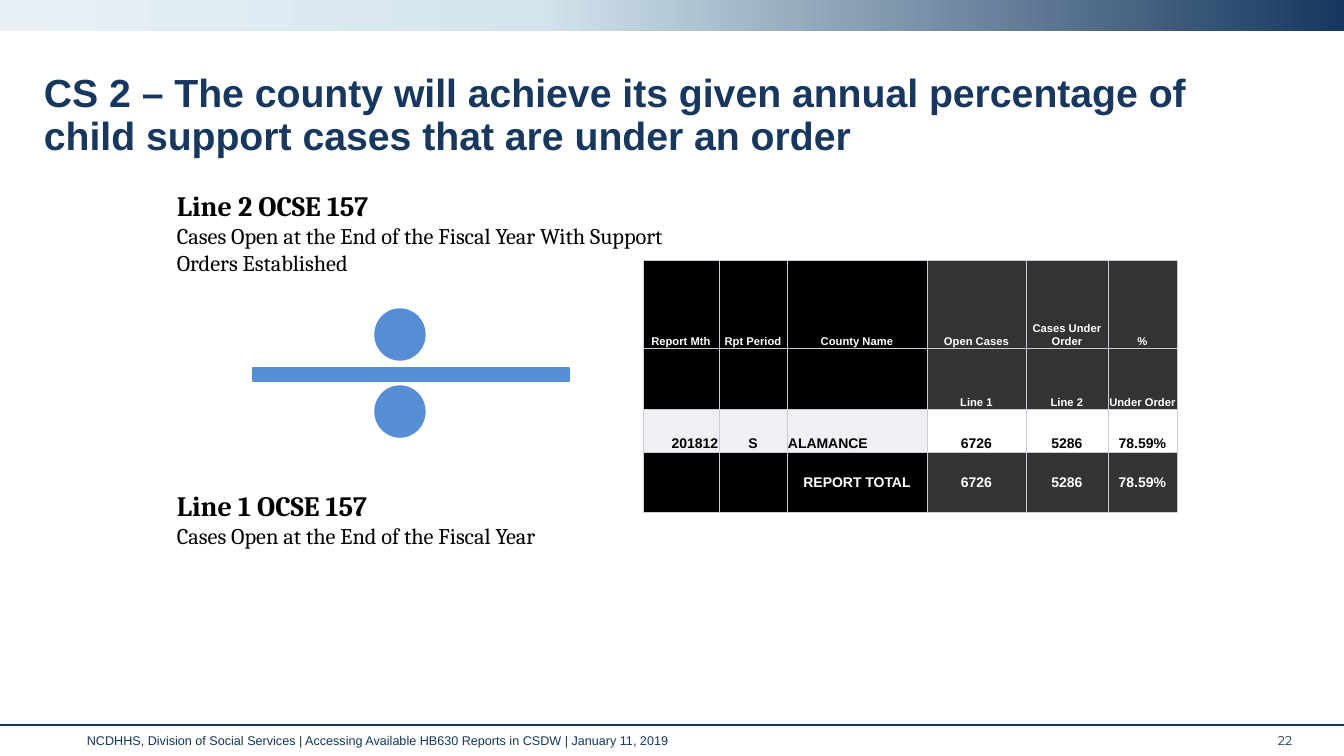
from copy import deepcopy

from lxml.etree import SubElement
from pptx import Presentation
from pptx.dml.color import RGBColor
from pptx.enum.shapes import MSO_CONNECTOR, MSO_SHAPE
from pptx.enum.text import MSO_ANCHOR, PP_ALIGN
from pptx.oxml.ns import qn
from pptx.util import Emu, Pt

NAVY = RGBColor(0x17, 0x37, 0x5E)
FOOTER_NAVY = RGBColor(0x15, 0x36, 0x5E)
BLUE = RGBColor(0x55, 0x8E, 0xD5)
ICE = RGBColor(0xD3, 0xE4, 0xED)
PALE = RGBColor(0xE9, 0xF1, 0xF6)
BLACK = RGBColor(0, 0, 0)
CHARCOAL = RGBColor(0x33, 0x33, 0x33)
LAVENDER = RGBColor(0xF0, 0xF0, 0xF4)
WHITE = RGBColor(0xFF, 0xFF, 0xFF)
BORDER = "CACAD9"

TITLE = ("CS 2 – The county will achieve its given annual percentage of "
         "child support cases that are under an order")
FOOTER = ("NCDHHS, Division of Social Services | Accessing Available HB630 "
          "Reports in CSDW | January 11, 2019")
PAGE_NUMBER = "22"
# top, height, heading, explanation
RATIO_PARTS = [
    (184, 129, "Line 2 OCSE 157",
     "Cases Open at the End of the Fiscal Year With Support Orders Established"),
    (484, 102, "Line 1 OCSE 157", "Cases Open at the End of the Fiscal Year"),
]
DIVISION_SIGN = [
    (MSO_SHAPE.RECTANGLE, (253, 368, 316, 13)),
    (MSO_SHAPE.OVAL, (375, 309, 50, 51)),
    (MSO_SHAPE.OVAL, (375, 386, 50, 51)),
]
BAND_STOPS = [(0, NAVY), (0.6, ICE), (1, PALE)]

COLUMN_WIDTHS = [76, 68, 140, 99, 82, 69]
LABEL_COLUMNS = 3
# height, label fill, figure fill, text colour, text size, anchor, cells
TABLE_ROWS = [
    (88, BLACK, CHARCOAL, WHITE, 8, MSO_ANCHOR.BOTTOM,
     ["Report Mth", "Rpt Period", "County Name", "Open Cases",
      "Cases Under Order", "%"]),
    (61, BLACK, CHARCOAL, WHITE, 8, MSO_ANCHOR.BOTTOM,
     ["", "", "", "Line 1", "Line 2", "Under Order"]),
    (43, LAVENDER, WHITE, BLACK, 10, MSO_ANCHOR.BOTTOM,
     ["201812", "S", "ALAMANCE", "6726", "5286", "78.59%"]),
    (60, BLACK, CHARCOAL, WHITE, 10, MSO_ANCHOR.MIDDLE,
     ["", "", "REPORT TOTAL", "6726", "5286", "78.59%"]),
]
ALIGNMENTS = {"201812": PP_ALIGN.RIGHT, "ALAMANCE": PP_ALIGN.LEFT}


def px(length):
    return Emu(round(length * 914400 / 100.8))


def box(*lengths):
    return [px(length) for length in lengths]


def write(paragraph, text, size=10, font="Arial", color=BLACK, bold=False,
          align=PP_ALIGN.LEFT):
    """Append one formatted run to the paragraph."""
    run = paragraph.add_run()
    run.text = text
    run.font.size = Pt(size)
    run.font.name = font
    run.font.bold = bold
    run.font.color.rgb = color
    paragraph.alignment = align


def add_paragraph_box(slide, *place):
    """Add a wrapping text box and return its first paragraph."""
    frame = slide.shapes.add_textbox(*box(*place)).text_frame
    frame.word_wrap = True
    return frame.paragraphs[0]


def add_header_band(slide):
    band = slide.shapes.add_shape(MSO_SHAPE.RECTANGLE, *box(0, 0, 1344, 31))
    band.shadow.inherit = False
    band.line.fill.background()
    band.fill.gradient()
    band.fill.gradient_angle = 180
    stop_list = band.fill._xPr.find(".//" + qn("a:gsLst"))
    stop_list.append(deepcopy(stop_list[0]))
    for stop, (position, color) in zip(band.fill.gradient_stops, BAND_STOPS):
        stop.position = position
        stop.color.rgb = color


def add_footer(slide):
    rule = slide.shapes.add_connector(MSO_CONNECTOR.STRAIGHT, *box(0, 725, 1344, 725))
    rule.line.color.rgb = NAVY
    rule.line.width = Pt(1.75)
    SubElement(rule._element.spPr, qn("a:effectLst"))
    write(add_paragraph_box(slide, 77, 728, 1175, 29), FOOTER,
          size=9, color=FOOTER_NAVY)
    write(add_paragraph_box(slide, 1268, 728, 59, 30), PAGE_NUMBER,
          size=9, font="Montserrat", color=FOOTER_NAVY)


def add_ratio(slide):
    sign = slide.shapes.add_group_shape()
    for kind, place in DIVISION_SIGN:
        shape = sign.shapes.add_shape(kind, *box(*place))
        shape.shadow.inherit = False
        shape.fill.solid()
        shape.fill.fore_color.rgb = BLUE
        shape.line.color.rgb = BLUE
        shape.line.width = Pt(1)
    for top, height, heading, explanation in RATIO_PARTS:
        paragraph = add_paragraph_box(slide, 167, top, 547, height)
        write(paragraph, heading, size=20, font="Cambria", bold=True)
        paragraph.add_line_break()
        write(paragraph, explanation, size=16, font="Cambria")


def add_borders(cell):
    properties = cell._tc.get_or_add_tcPr()
    for side in ("lnL", "lnR", "lnT", "lnB"):
        line = SubElement(properties, qn("a:" + side), w=str(Pt(0.5)))
        fill = SubElement(line, qn("a:solidFill"))
        SubElement(fill, qn("a:srgbClr"), val=BORDER)


def add_report_table(slide):
    width = sum(COLUMN_WIDTHS)
    height = sum(row[0] for row in TABLE_ROWS)
    table = slide.shapes.add_table(len(TABLE_ROWS), len(COLUMN_WIDTHS),
                                   *box(643, 260, width, height)).table
    for column, column_width in zip(table.columns, COLUMN_WIDTHS):
        column.width = px(column_width)
    for row, values in zip(table.rows, TABLE_ROWS):
        row_height, label_fill, figure_fill, color, size, anchor, texts = values
        row.height = px(row_height)
        for index, (cell, text) in enumerate(zip(row.cells, texts)):
            add_borders(cell)
            cell.fill.solid()
            cell.fill.fore_color.rgb = (
                label_fill if index < LABEL_COLUMNS else figure_fill)
            cell.vertical_anchor = anchor
            cell.margin_left = cell.margin_right = cell.margin_top = px(1)
            cell.margin_bottom = 0
            if text:
                write(cell.text_frame.paragraphs[0], text, size=size, color=color,
                      bold=True, align=ALIGNMENTS.get(text, PP_ALIGN.CENTER))


def main():
    presentation = Presentation()
    presentation.slide_width, presentation.slide_height = box(1344, 756)
    slide = presentation.slides.add_slide(presentation.slide_layouts[6])
    add_header_band(slide)
    add_footer(slide)
    add_ratio(slide)
    title = add_paragraph_box(slide, 34, 69, 1218, 60)
    title.line_spacing = 0.9
    write(title, TITLE, size=28, color=NAVY, bold=True)
    add_report_table(slide)
    presentation.save("out.pptx")


if __name__ == "__main__":
    main()
